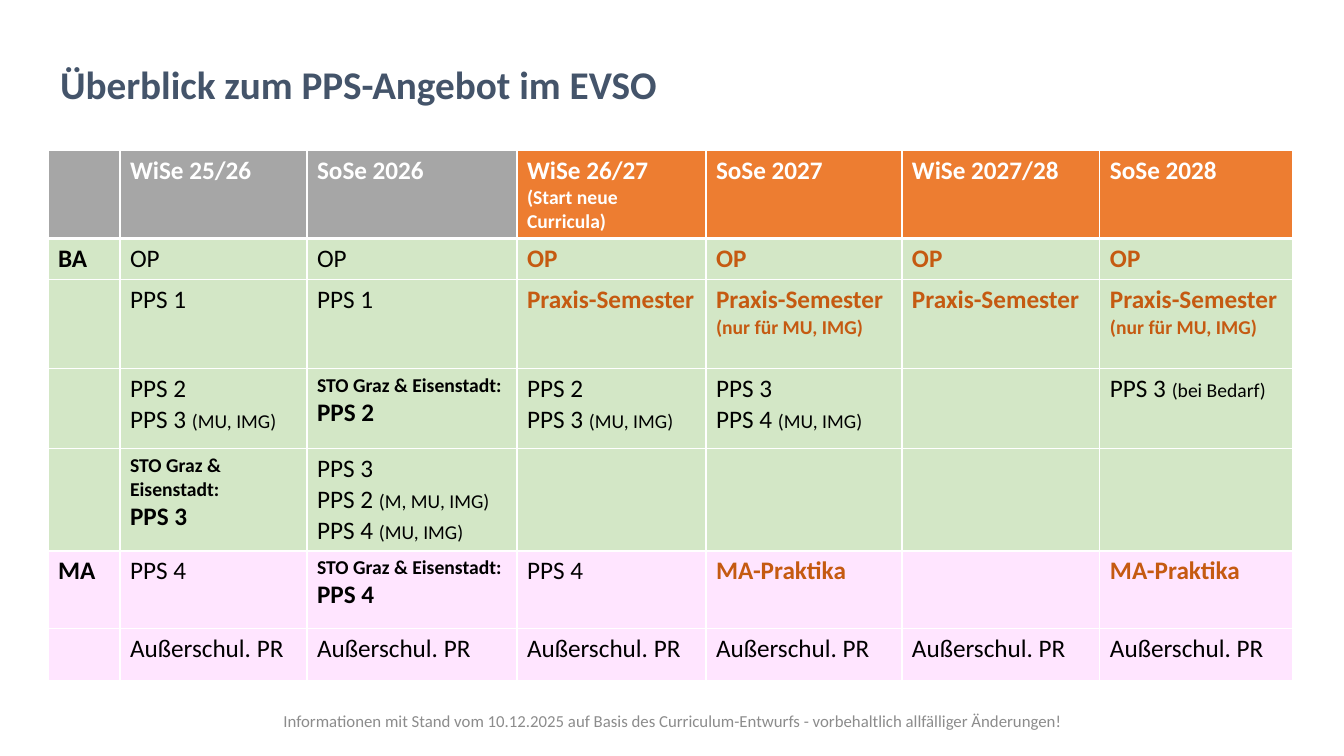
from lxml import etree
from pptx import Presentation
from pptx import util as u
from pptx.dml import color
from pptx.enum import text
from pptx.oxml import ns

PX = 12192000 / 1344
FONT = "Calibri"
COLORS = {
    "title": "44546A", "white": "FFFFFF", "black": "000000", "new": "C55A11",
    "note": "8C8C8C", "gray": "A6A6A6", "orange": "ED7D31",
    "green": "A9D18E", "pink": "FFCCFF",
}
# Style: size, colour, bold
STYLES = {
    "title": (28, "title", True), "foot": (12, "note", False),
    "head": (18, "white", True), "sub": (14, "white", True),
    "plain": (18, "black", False), "small": (14, "black", False),
    "bold": (18, "black", True), "place": (14, "black", True),
    "new": (18, "new", True), "hint": (14, "new", True),
}
WIDTHS = [72, 187, 210, 189, 196, 198, 193]
HEIGHTS = [87, 41, 89, 80, 102, 78, 52]


def px(n):
    return u.Emu(round(n * PX))


def rgb(name):
    return color.RGBColor.from_string(COLORS[name])


def add_run(para, words, style):
    size, tint, bold = STYLES[style]
    run = para.add_run()
    run.text = words
    font = run.font
    font.name, font.size, font.bold = FONT, u.Pt(size), bold
    font.color.rgb = rgb(tint)


def fill_text(frame, paras):
    for i, runs in enumerate(paras):
        para = frame.add_paragraph() if i else frame.paragraphs[0]
        for words, style in runs:
            add_run(para, words, style)


# Cell contents: lists of paragraphs, each a list of runs
def line(words, style="plain"):
    return [[(words, style)]]


def pps(num, note=""):
    if not note:
        return line(f"PPS {num}")
    return [[(f"PPS {num} ", "plain"), (f"({note})", "small")]]


def site(num):
    return line("STO Graz & Eisenstadt:", "place") + line(f"PPS {num}", "bold")


def term(note=""):
    if not note:
        return line("Praxis-Semester", "new")
    return [[("Praxis-Semester ", "new"), (f"({note})", "hint")]]


def get_rows():
    heads = ["WiSe 25/26", "SoSe 2026", "WiSe 26/27", "SoSe 2027",
             "WiSe 2027/28", "SoSe 2028"]
    top = [[]] + [line(h, "head") for h in heads]
    top[3] += line("(Start neue Curricula)", "sub")
    only, duo = "nur für MU, IMG", "MU, IMG"
    thesis = line("MA-Praktika", "new")
    return [
        top,
        [line("BA", "bold")] + [line("OP")] * 2 + [line("OP", "new")] * 4,
        [[], pps(1), pps(1), term(), term(only), term(), term(only)],
        [[], pps(2) + pps(3, duo), site(2), pps(2) + pps(3, duo),
         pps(3) + pps(4, duo), [], pps(3, "bei Bedarf")],
        [[], site(3), pps(3) + pps(2, "M, MU, IMG") + pps(4, duo),
         [], [], [], []],
        [line("MA", "bold"), pps(4), site(4), pps(4), thesis, [], thesis],
        [[]] + [line("Außerschul. PR")] * 6,
    ]


def paint(cell, tint, alpha=None):
    cell.fill.solid()
    cell.fill.fore_color.rgb = rgb(tint)
    if alpha:
        clr = cell._tc.tcPr.find(".//" + ns.qn("a:srgbClr"))
        etree.SubElement(clr, ns.qn("a:alpha"), val=str(alpha * 1000))


def edge(cell, row):
    wide = {"lnB": 3} if row == 0 else {"lnT": 3} if row == 1 else {}
    for i, side in enumerate(["lnL", "lnR", "lnT", "lnB"]):
        ln = etree.Element(ns.qn("a:" + side), w=str(u.Pt(wide.get(side, 1))))
        fill = etree.SubElement(ln, ns.qn("a:solidFill"))
        etree.SubElement(fill, ns.qn("a:srgbClr"), val=COLORS["white"])
        cell._tc.tcPr.insert(i, ln)


def add_title(slide):
    title = slide.shapes.title
    title.left, title.top, title.width, title.height = map(px, (50, 50, 882, 73))
    frame = title.text_frame
    frame.auto_size = text.MSO_AUTO_SIZE.NONE
    frame.vertical_anchor = text.MSO_ANCHOR.MIDDLE
    fill_text(frame, line("Überblick zum PPS-Angebot im EVSO", "title"))
    para = frame.paragraphs[0]
    para.alignment, para.line_spacing = text.PP_ALIGN.LEFT, 0.9


def add_plan(slide):
    rows = get_rows()
    box = map(px, (48, 150, sum(WIDTHS), sum(HEIGHTS)))
    table = slide.shapes.add_table(len(rows), len(WIDTHS), *box).table
    for col, width in zip(table.columns, WIDTHS):
        col.width = px(width)
    for r, cells in enumerate(rows):
        table.rows[r].height = px(HEIGHTS[r])
        for c, paras in enumerate(cells):
            cell = table.cell(r, c)
            fill_text(cell.text_frame, paras)
            if r == 0:
                paint(cell, "gray" if c < 3 else "orange")
            else:
                paint(cell, "green" if r < 5 else "pink", 50)
            edge(cell, r)


def add_foot(slide):
    frame = slide.shapes.add_textbox(*map(px, (199, 701, 948, 40))).text_frame
    frame.word_wrap = True
    frame.vertical_anchor = text.MSO_ANCHOR.MIDDLE
    fill_text(frame, line(
        "Informationen mit Stand vom 10.12.2025 auf Basis des "
        "Curriculum-Entwurfs - vorbehaltlich allfälliger Änderungen!", "foot"))
    frame.paragraphs[0].alignment = text.PP_ALIGN.CENTER


def main():
    prs = Presentation()
    prs.slide_width, prs.slide_height = px(1344), px(756)
    slide = prs.slides.add_slide(prs.slide_layouts[5])
    add_title(slide)
    add_plan(slide)
    add_foot(slide)
    prs.save("out.pptx")


if __name__ == "__main__":
    main()
